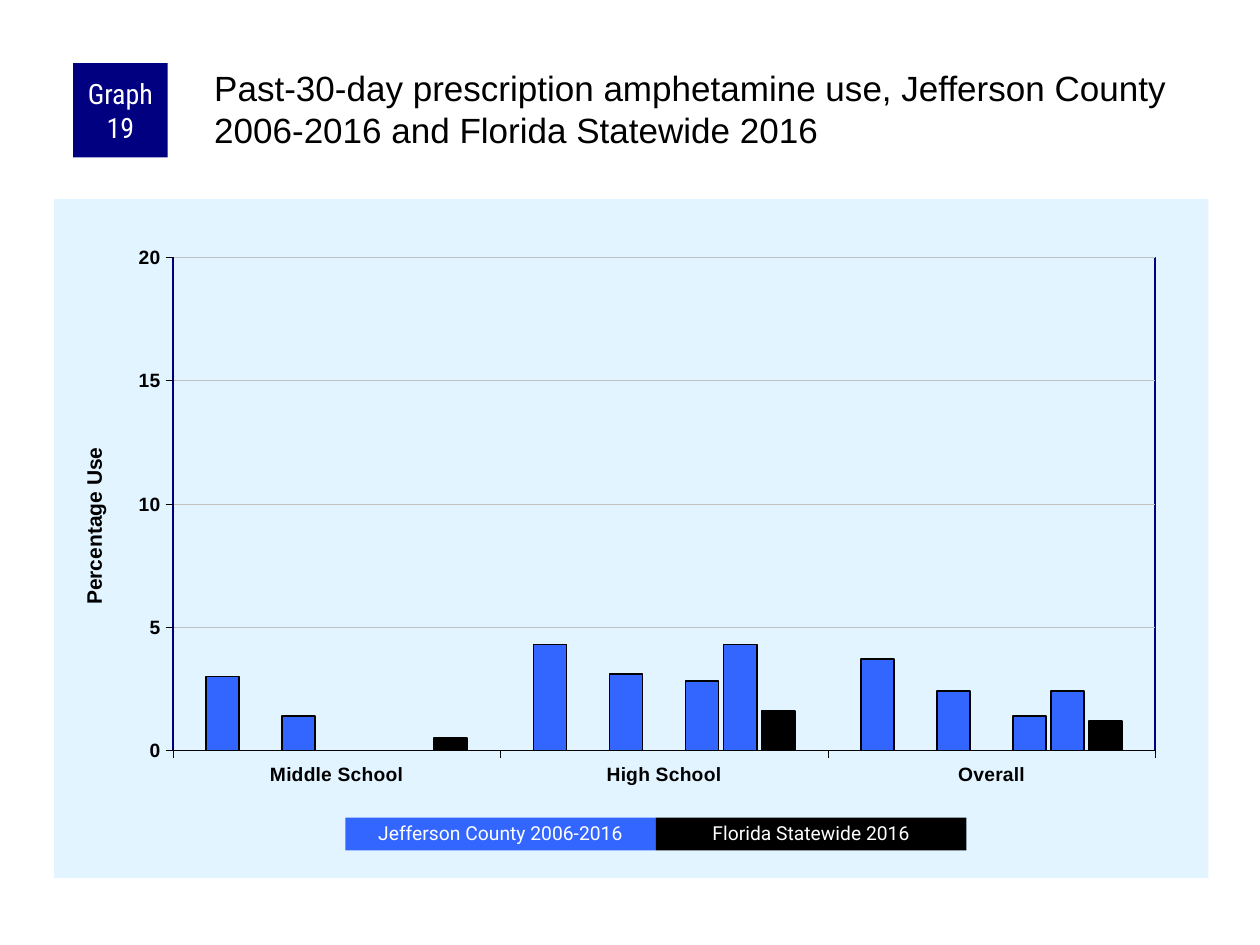
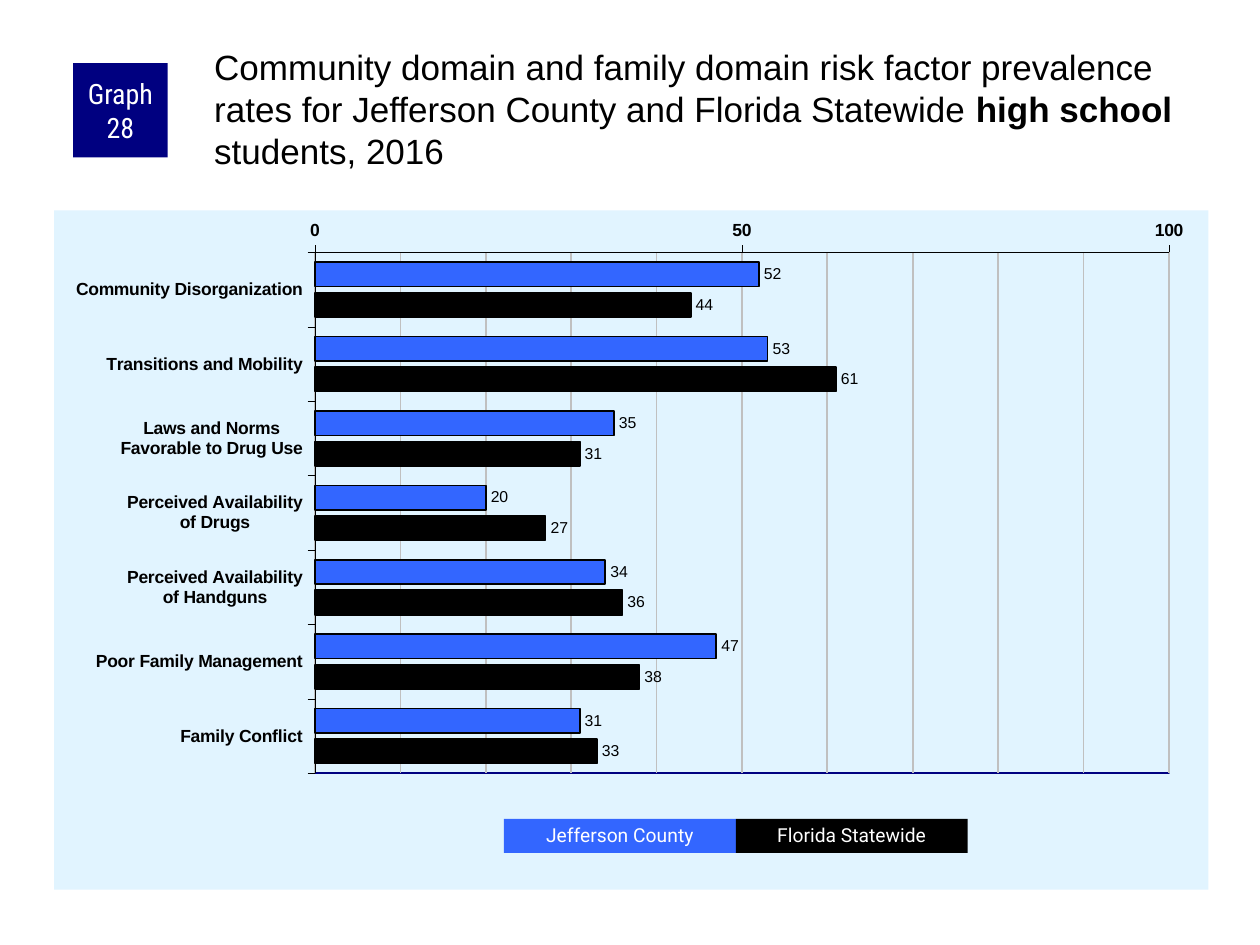
from dataclasses import dataclass

from lxml import etree
from pptx import Presentation
from pptx.chart.data import CategoryChartData
from pptx.dml.color import RGBColor
from pptx.enum.chart import (XL_AXIS_CROSSES, XL_CHART_TYPE, XL_LABEL_POSITION,
                             XL_TICK_MARK)
from pptx.enum.shapes import MSO_SHAPE
from pptx.enum.text import MSO_ANCHOR, MSO_AUTO_SIZE, PP_ALIGN
from pptx.oxml import parse_xml
from pptx.oxml.ns import nsdecls, qn
from pptx.util import Inches, Pt

COLUMNS, BARS = XL_CHART_TYPE.COLUMN_CLUSTERED, XL_CHART_TYPE.BAR_CLUSTERED
TICK_OUT, TICK_NONE = XL_TICK_MARK.OUTSIDE, XL_TICK_MARK.NONE
CROSS_AT_END = XL_AXIS_CROSSES.MAXIMUM
LABEL_OUTSIDE = XL_LABEL_POSITION.OUTSIDE_END
RECTANGLE = MSO_SHAPE.RECTANGLE
MIDDLE, TOP = MSO_ANCHOR.MIDDLE, MSO_ANCHOR.TOP
CENTER, LEFT = PP_ALIGN.CENTER, PP_ALIGN.LEFT
NO_FIT = MSO_AUTO_SIZE.NONE
TITLE_ONLY = 5


@dataclass(frozen=True)
class Theme:
    county: str = "3366FF"
    state: str = "000000"
    ink: str = "000000"
    navy: str = "000080"
    panel: str = "E1F4FF"
    grid: str = "C0C0C0"
    white: str = "FFFFFF"
    body_font: str = "Arial"
    badge_font: str = "Roboto Condensed"
    legend_font: str = "Roboto"
    title_size: float = 20
    badge_size: float = 16
    legend_size: float = 11
    axis_title_size: float = 12
    value_size: float = 9
    axis_line: float = 0.25
    bar_line: float = 1


THEME = Theme()

AMPHETAMINE_USE = {
    "kind": COLUMNS,
    "categories": ["Middle School", "High School", "Overall"],
    "series": [(3, 4.3, 3.7), (0, 0, 0), (1.4, 3.1, 2.4), (0, 0, 0),
               (0, 2.8, 1.4), (0, 4.3, 2.4), (0.5, 1.6, 1.2)],
    "gap": 200, "overlap": -15, "axis_size": 11, "grid_width": 0.25,
    "plot": (0.103, 0.086, 0.851, 0.726),
    "scale": {"minimum_scale": 0, "maximum_scale": 20, "major_unit": 5},
    "axis_title": "Percentage Use",
}

RISK_FACTORS = {
    "kind": BARS,
    "categories": ["Community Disorganization", "Transitions and Mobility",
                   "Laws and Norms\nFavorable to Drug Use",
                   "Perceived Availability\nof Drugs",
                   "Perceived Availability\nof Handguns",
                   "Poor Family Management", "Family Conflict"],
    "series": [(52, 53, 35, 20, 34, 47, 31), (44, 61, 31, 27, 36, 38, 33)],
    "gap": 80, "overlap": -25, "axis_size": 10, "grid_width": 1,
    "plot": (0.226, 0.062, 0.74, 0.767),
    "scale": {"minimum_scale": 0, "maximum_scale": 100, "major_unit": 50,
              "minor_unit": 10, "has_minor_gridlines": True},
}


def apply(target, formats):
    for name, value in formats.items():
        setattr(target, name, value)


def rgb(color):
    return RGBColor.from_string(color)


def style_font(font, name, size, color, bold=False):
    apply(font, {"name": name, "size": Pt(size), "bold": bold})
    font.color.rgb = rgb(color)


def style_line(line, color, width):
    line.color.rgb = rgb(color)
    line.width = Pt(width)


def place(shape, box):
    for name, length in zip(("left", "top", "width", "height"), box):
        setattr(shape, name, Inches(length))


def add_title(slide, box, runs):
    """Runs are (text, bold) pairs."""
    title = slide.shapes.title
    place(title, box)
    frame = title.text_frame
    apply(frame, {"word_wrap": True, "auto_size": NO_FIT, "vertical_anchor": TOP,
                  "margin_left": Inches(0.03), "margin_top": Inches(0.03),
                  "margin_right": 0, "margin_bottom": 0})
    paragraph = frame.paragraphs[0]
    paragraph.alignment = LEFT
    for text, bold in runs:
        run = paragraph.add_run()
        run.text = text
        style_font(run.font, THEME.body_font, THEME.title_size, THEME.ink, bold)


def add_block(slide, box, text, fill, font, size, line_spacing=1.0):
    """Flat rectangle with centred white text."""
    block = slide.shapes.add_shape(RECTANGLE, *map(Inches, box))
    block.shadow.inherit = False
    block.fill.solid()
    block.fill.fore_color.rgb = rgb(fill)
    block.line.fill.background()
    frame = block.text_frame
    apply(frame, {"word_wrap": True, "vertical_anchor": MIDDLE,
                  "margin_left": Inches(0.05), "margin_right": Inches(0.05),
                  "margin_top": 0, "margin_bottom": 0})
    paragraph = frame.paragraphs[0]
    apply(paragraph, {"alignment": CENTER, "line_spacing": line_spacing})
    run = paragraph.add_run()
    run.text = text
    style_font(run.font, font, size, THEME.white)


def add_legend(slide, box, labels):
    """Splits the box evenly between the labels."""
    left, top, width, height = box
    share = width / len(labels)
    for i, (label, fill) in enumerate(zip(labels, (THEME.county, THEME.state))):
        add_block(slide, (left + i * share, top, share, height), label, fill,
                  THEME.legend_font, THEME.legend_size, 0.9)


def set_layout(parent, index, **fractions):
    """Puts a chart part at fractions of the chart's size."""
    for old in parent.findall(qn("c:layout")):
        parent.remove(old)
    layout = parse_xml(f"<c:layout {nsdecls('c')}><c:manualLayout/></c:layout>")
    manual = layout[0]
    settings = {"xMode": "edge", "yMode": "edge", **fractions}
    if "w" in fractions:
        settings = {"layoutTarget": "inner", **settings}
    for tag, value in settings.items():
        etree.SubElement(manual, qn(f"c:{tag}")).set("val", str(value))
    parent.insert(index, layout)


def chart_area_format(fill, line):
    def paint(color):
        if color is None:
            return "<a:noFill/>"
        return f'<a:solidFill><a:srgbClr val="{color}"/></a:solidFill>'
    return parse_xml(f"<c:spPr {nsdecls('c', 'a')}>{paint(fill)}"
                     f'<a:ln w="{Pt(1)}">{paint(line)}</a:ln></c:spPr>')


def style_axes(chart, data):
    for axis in (chart.category_axis, chart.value_axis):
        apply(axis, {"major_tick_mark": TICK_OUT, "minor_tick_mark": TICK_NONE})
        style_font(axis.tick_labels.font, THEME.body_font, data["axis_size"],
                   THEME.ink, True)
        style_line(axis.format.line, THEME.ink, THEME.axis_line)
    values = chart.value_axis
    apply(values, {"has_major_gridlines": True, **data["scale"]})
    style_line(values.major_gridlines.format.line, THEME.grid, data["grid_width"])
    if values.has_minor_gridlines:
        minor = values._element.find(qn("c:minorGridlines"))
        minor.append(chart_area_format(None, THEME.grid))
    if data["kind"] == BARS:
        apply(chart.category_axis, {"reverse_order": True, "crosses": CROSS_AT_END})
    if "axis_title" in data:
        heading = values.axis_title
        heading.text_frame.text = data["axis_title"]
        style_font(heading.text_frame.paragraphs[0].runs[0].font, THEME.body_font,
                   THEME.axis_title_size, THEME.ink, True)
        set_layout(heading._element, 1, x=0.02, y=0.36)


def style_series(plot, labelled):
    *county, state = plot.series
    colors = [THEME.county] * len(county) + [THEME.state]
    for series, color in zip((*county, state), colors):
        series.format.fill.solid()
        series.format.fill.fore_color.rgb = rgb(color)
        series.invert_if_negative = False
        style_line(series.format.line, THEME.ink, THEME.bar_line)
        if labelled:
            labels = series.data_labels
            apply(labels, {"show_value": True, "position": LABEL_OUTSIDE})
            style_font(labels.font, THEME.body_font, THEME.value_size, THEME.ink)


def add_survey_chart(slide, box, data):
    """The last series is the state, all others are the county."""
    chart_data = CategoryChartData()
    chart_data.categories = data["categories"]
    for number, values in enumerate(data["series"], 1):
        chart_data.add_series(f"Series {number}", values)
    chart = slide.shapes.add_chart(data["kind"], *map(Inches, box), chart_data).chart
    apply(chart, {"has_title": False, "has_legend": False})
    style_font(chart.font, THEME.body_font, data["axis_size"], THEME.ink)

    plot = chart.plots[0]
    apply(plot, {"gap_width": data["gap"], "overlap": data["overlap"],
                 "vary_by_categories": False})
    style_series(plot, labelled=data["kind"] == BARS)
    style_axes(chart, data)

    body = chart._chartSpace.find(qn("c:chart"))
    body.addnext(chart_area_format(THEME.panel, None))
    plot_area = body.find(qn("c:plotArea"))
    set_layout(plot_area, 0, **dict(zip("xywh", data["plot"])))
    plot_area.append(chart_area_format(None, THEME.navy))


def add_graph_slide(deck, number, title_top, title, chart_top, data, legend_box, legend):
    slide = deck.slides.add_slide(deck.slide_layouts[TITLE_ONLY])
    add_survey_chart(slide, (0.43, chart_top, 9.16, 5.39), data)
    add_block(slide, (0.58, 0.5, 0.75, 0.75), f"Graph {number}", THEME.navy,
              THEME.badge_font, THEME.badge_size)
    add_title(slide, (1.67, title_top, 7.92, 0.83), title)
    add_legend(slide, legend_box, legend)


def main():
    deck = Presentation()
    deck.slide_width, deck.slide_height = Inches(10), Inches(7.5)
    add_graph_slide(
        deck, 19, 0.5,
        [("Past-30-day prescription amphetamine use, Jefferson County "
          "2006-2016 and Florida Statewide 2016", False)],
        1.58, AMPHETAMINE_USE, (2.74, 6.49, 4.93, 0.26),
        ("Jefferson County 2006-2016", "Florida Statewide 2016"))
    add_graph_slide(
        deck, 28, 0.33,
        [("Community domain and family domain risk factor prevalence rates "
          "for Jefferson County and Florida Statewide ", False),
         ("high school", True), (" students, 2016", False)],
        1.67, RISK_FACTORS, (4, 6.5, 3.68, 0.27),
        ("Jefferson County", "Florida Statewide"))
    deck.save("out.pptx")


if __name__ == "__main__":
    main()
